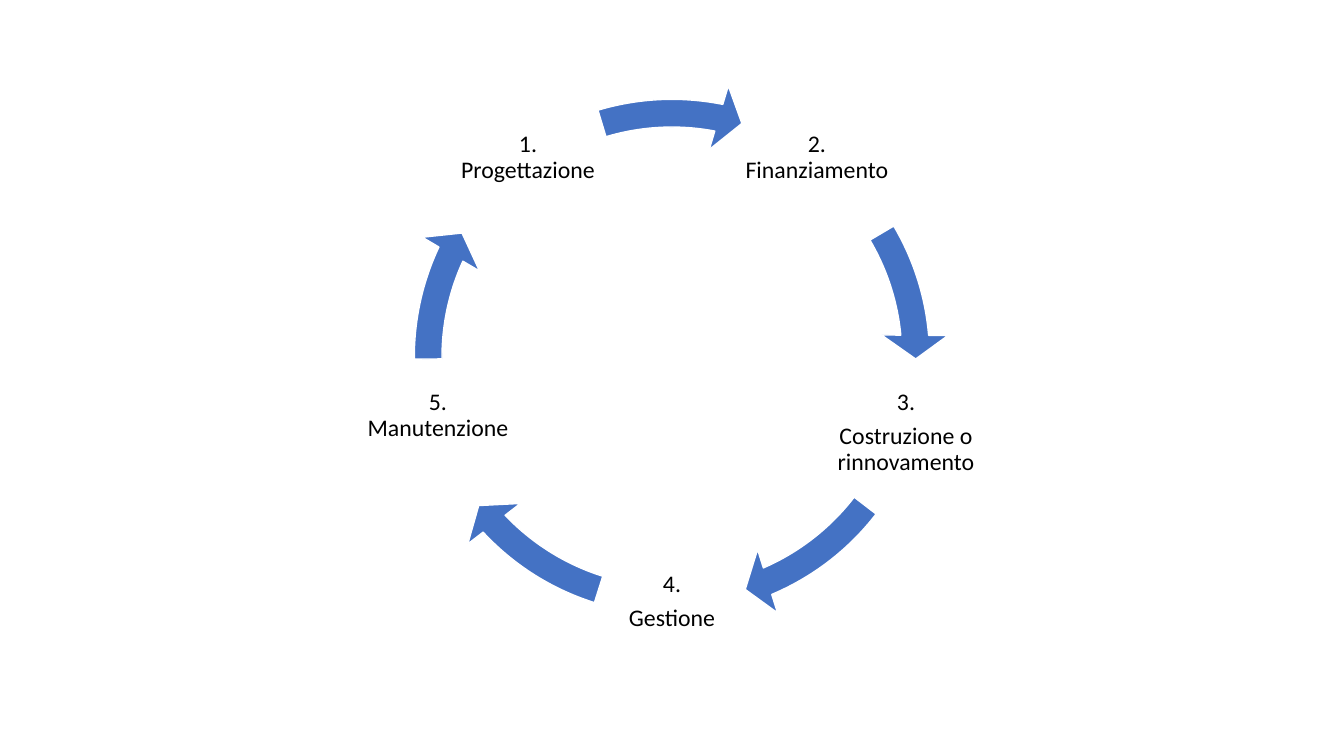
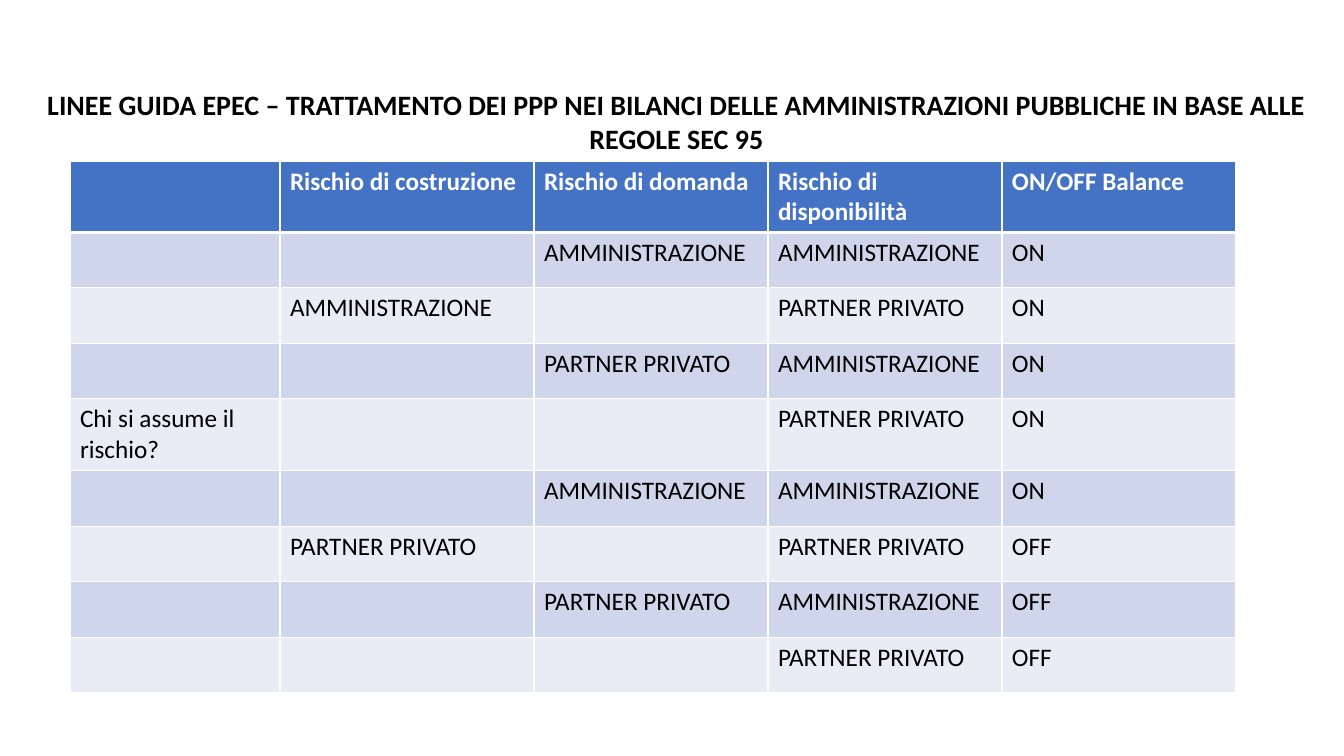
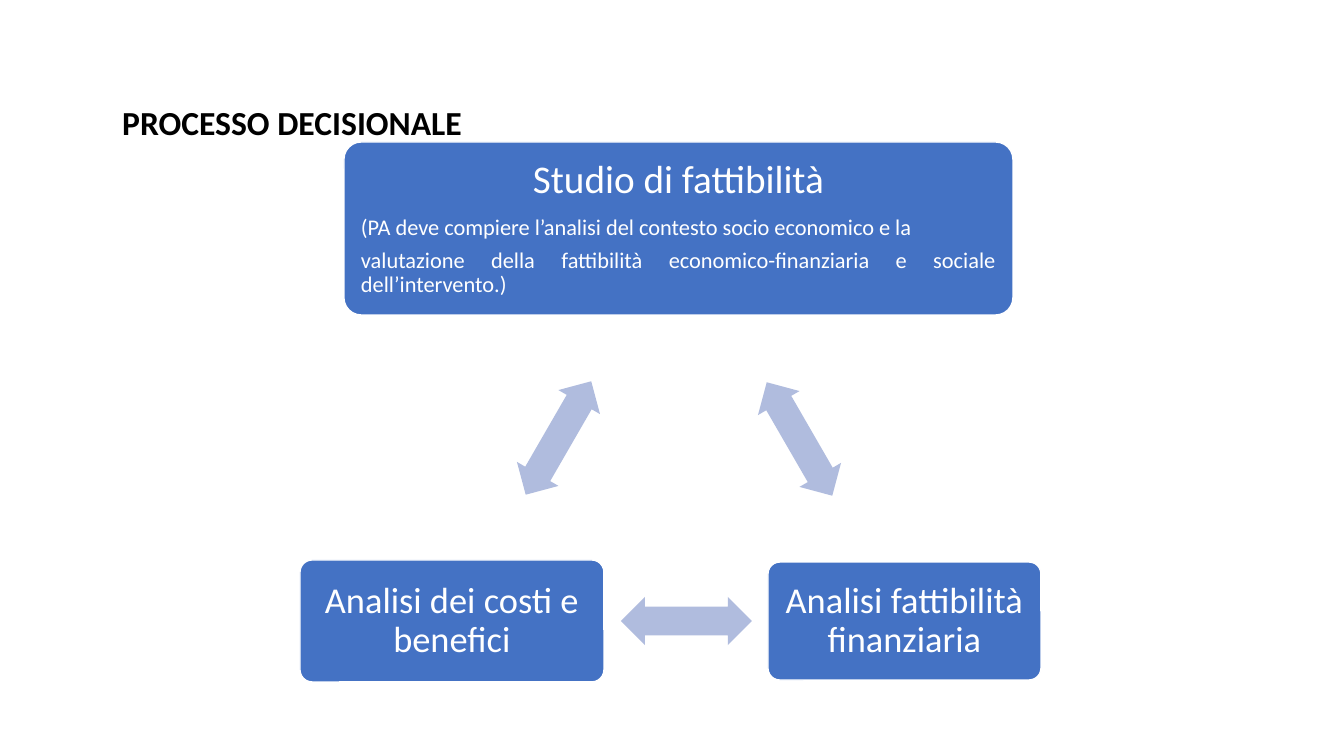
from lxml import etree
from pptx import Presentation
from pptx.dml.color import RGBColor
from pptx.enum.shapes import MSO_SHAPE
from pptx.enum.text import MSO_ANCHOR, MSO_AUTO_SIZE, PP_ALIGN
from pptx.oxml.ns import qn
from pptx.util import Pt

CENTER, JUSTIFY, LEFT = PP_ALIGN.CENTER, PP_ALIGN.JUSTIFY, PP_ALIGN.LEFT
TOP, MIDDLE = MSO_ANCHOR.TOP, MSO_ANCHOR.MIDDLE
NO_AUTOFIT = MSO_AUTO_SIZE.NONE
CYCLE_ARROW = MSO_SHAPE.CIRCULAR_ARROW
TWO_WAY_ARROW = MSO_SHAPE.LEFT_RIGHT_ARROW
ROUNDED = MSO_SHAPE.ROUNDED_RECTANGLE

SLIDE_W, SLIDE_H = 1344, 756
SCALE = 12192000 / SLIDE_W
TITLE_ONLY, BLANK = 5, 6
FONT = "Calibri"
COLORS = {
    "text": "000000",
    "white": "FFFFFF",
    "blue": "4472C4",
    "pale_blue": "B0BCDE",
    "band_dark": "CFD5EA",
    "band_light": "E9EBF5",
}

STAGES = [
    (["1. Progettazione"], 454, 84),
    (["2. Finanziamento"], 743, 84),
    (["3.", "Costruzione o rinnovamento"], 832, 359),
    (["4.", "Gestione"], 598, 528),
    (["5. Manutenzione"], 364, 342),
]
STAGE_SIZE = 148
RING = (395, 80, 554, 554)
ARROW_ANGLES = [
    (212.93, 197.67),
    (40.14, 22.54),
    (82.1, 64.5),
    (122.97, 107.71),
    (168.65, 151.99),
]

PUBLIC, PRIVATE = "AMMINISTRAZIONE", "PARTNER PRIVATO"
RISK_TABLE = [
    ["", "Rischio di costruzione", "Rischio di domanda",
     "Rischio di disponibilità", "ON/OFF Balance"],
    ["", "", PUBLIC, PUBLIC, "ON"],
    ["", PUBLIC, "", PRIVATE, "ON"],
    ["", "", PRIVATE, PUBLIC, "ON"],
    ["Chi si assume il rischio?", "", "", PRIVATE, "ON"],
    ["", "", PUBLIC, PUBLIC, "ON"],
    ["", PRIVATE, "", PRIVATE, "OFF"],
    ["", "", PRIVATE, PUBLIC, "OFF"],
    ["", "", "", PRIVATE, "OFF"],
]
COLUMN_WIDTHS = [210, 254, 234, 234, 234]
ROW_HEIGHTS = [70, 55, 56, 55, 70, 56, 55, 56, 55]


def px(length):
    return round(length * SCALE)


def box(*lengths):
    return [px(length) for length in lengths]


def rgb(name):
    return RGBColor.from_string(COLORS[name])


def add_run(paragraph, text, size, color, bold=False):
    run = paragraph.add_run()
    run.text = text
    run.font.name = FONT
    run.font.size = Pt(size)
    run.font.bold = bold
    run.font.color.rgb = rgb(color)


def set_frame(frame, inset, anchor):
    frame.word_wrap = True
    frame.auto_size = NO_AUTOFIT
    frame.vertical_anchor = anchor
    frame.margin_left = frame.margin_right = px(inset)
    frame.margin_top = frame.margin_bottom = px(inset)


def write_lines(frame, lines, color):
    for index, (text, size, align) in enumerate(lines):
        paragraph = frame.add_paragraph() if index else frame.paragraphs[0]
        paragraph.alignment = align
        paragraph.line_spacing = 0.9
        paragraph.space_after = Pt(round(size * 0.35))
        add_run(paragraph, text, size, color)


def set_title(slide, text, size, position):
    title = slide.shapes.title
    title.left, title.top, title.width, title.height = box(*position)
    frame = title.text_frame
    set_frame(frame, 5, TOP)
    frame.margin_left = frame.margin_right = px(10)
    paragraph = frame.paragraphs[0]
    paragraph.alignment = CENTER
    add_run(paragraph, text, size, "text", bold=True)


def add_filled(slide, preset, position, fill, adjustments, outlined=True, rotation=0):
    shape = slide.shapes.add_shape(preset, *box(*position))
    shape.shadow.inherit = False
    shape.rotation = rotation
    for index, value in enumerate(adjustments):
        shape.adjustments[index] = value
    shape.fill.solid()
    shape.fill.fore_color.rgb = rgb(fill)
    if outlined:
        shape.line.color.rgb = rgb("white")
        shape.line.width = Pt(1)
    else:
        shape.line.fill.background()
    return shape


def add_stage(slide, lines, left, top):
    label = slide.shapes.add_textbox(*box(left, top, STAGE_SIZE, STAGE_SIZE))
    set_frame(label.text_frame, 2, MIDDLE)
    write_lines(label.text_frame, [(line, 17, CENTER) for line in lines], "text")


def add_step(slide, position, inset, lines):
    step = add_filled(slide, ROUNDED, position, "blue", [0.1])
    set_frame(step.text_frame, inset, MIDDLE)
    write_lines(step.text_frame, lines, "white")


def set_borders(cell, top, bottom):
    properties = cell._tc.get_or_add_tcPr()
    widths = {"a:lnL": 1, "a:lnR": 1, "a:lnT": top, "a:lnB": bottom}
    for index, (side, width) in enumerate(widths.items()):
        border = etree.Element(qn(side), w=str(Pt(width)))
        fill = etree.SubElement(border, qn("a:solidFill"))
        etree.SubElement(fill, qn("a:srgbClr"), val=COLORS["white"])
        properties.insert(index, border)


def add_risk_table(slide, left, top):
    frame = slide.shapes.add_table(
        len(RISK_TABLE), len(COLUMN_WIDTHS),
        *box(left, top, sum(COLUMN_WIDTHS), sum(ROW_HEIGHTS)))
    table = frame.table
    for column, width in zip(table.columns, COLUMN_WIDTHS):
        column.width = px(width)
    for row_index, texts in enumerate(RISK_TABLE):
        table.rows[row_index].height = px(ROW_HEIGHTS[row_index])
        header = row_index == 0
        band = "band_dark" if row_index % 2 else "band_light"
        for column_index, text in enumerate(texts):
            cell = table.cell(row_index, column_index)
            cell.fill.solid()
            cell.fill.fore_color.rgb = rgb("blue" if header else band)
            set_borders(cell, 3 if row_index == 1 else 1, 3 if header else 1)
            if text:
                paragraph = cell.text_frame.paragraphs[0]
                paragraph.alignment = LEFT
                add_run(paragraph, text, 18, "white" if header else "text", header)


def build_cycle(slide):
    for start_end in ARROW_ANGLES:
        add_filled(slide, CYCLE_ARROW, RING, "blue", [0.05, 3.36, *start_end, 0.06])
    for stage in STAGES:
        add_stage(slide, *stage)


def build_risks(slide):
    set_title(slide, "LINEE GUIDA EPEC – TRATTAMENTO DEI PPP NEI BILANCI DELLE "
              "AMMINISTRAZIONI PUBBLICHE IN BASE ALLE REGOLE SEC 95",
              20, (0, 83, 1353, 79))
    add_risk_table(slide, 70, 161)


def build_decision(slide):
    set_title(slide, "PROCESSO DECISIONALE", 24, (0, 97, 584, 50))
    add_step(slide, (344, 142, 669, 173), 12, [
        ("Studio di fattibilità", 28, CENTER),
        ("(PA deve compiere l’analisi del contesto socio economico e la", 16, JUSTIFY),
        ("valutazione della fattibilità economico-finanziaria e sociale "
         "dell’intervento.)", 16, JUSTIFY),
    ])
    add_step(slide, (768, 562, 273, 118), 11,
             [("Analisi fattibilità finanziaria", 26, CENTER)])
    add_step(slide, (300, 560, 304, 122), 11,
             [("Analisi dei costi e benefici", 26, CENTER)])
    for left, top, rotation in [(734, 415, 60), (621, 597, 180), (493, 414, 300)]:
        add_filled(slide, TWO_WAY_ARROW, (left, top, 131, 48), "pale_blue",
                   [0.6, 0.5], outlined=False, rotation=rotation)


def main():
    deck = Presentation()
    deck.slide_width, deck.slide_height = box(SLIDE_W, SLIDE_H)
    for layout, build in [(BLANK, build_cycle), (TITLE_ONLY, build_risks),
                          (TITLE_ONLY, build_decision)]:
        build(deck.slides.add_slide(deck.slide_layouts[layout]))
    deck.save("out.pptx")


if __name__ == "__main__":
    main()
